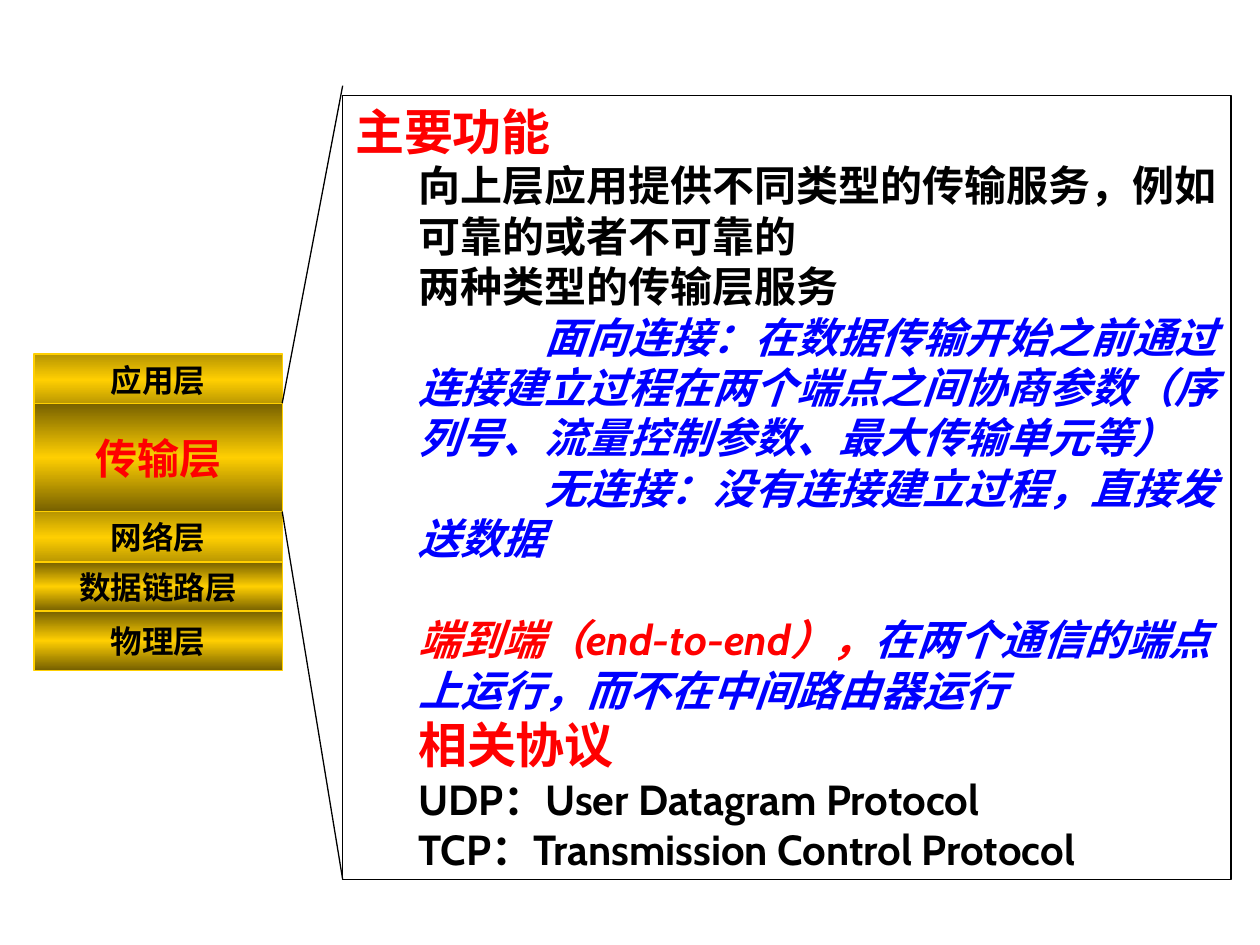
"""Build the transport layer slide: protocol stack, callout lines and function panel."""
from copy import deepcopy
from dataclasses import dataclass

from lxml import etree
from pptx import Presentation
from pptx import util as u
from pptx.dml.color import RGBColor
from pptx.enum import shapes, text
from pptx.oxml import ns

SCALE = 9144


@dataclass(frozen=True)
class Theme:
    font: str = "Cabin"
    black: str = "000000"
    red: str = "FF0000"
    blue: str = "0000FF"
    gold: str = "FFCF01"
    bronze: str = "B69401"
    olive: str = "766000"
    label: int = 18
    body: int = 24
    heading: int = 28
    line: float = 0.75


THEME = Theme()


def px(length):
    return u.Emu(length * SCALE)


def add_text(paragraph, content, size=THEME.body, color=THEME.black, italic=False):
    run = paragraph.add_run()
    run.text = content
    font = run.font
    font.name, font.size = THEME.font, u.Pt(size)
    font.bold, font.italic = True, italic
    font.color.rgb = RGBColor.from_string(color)


class SlideBuilder:
    def __init__(self, slide, theme):
        self.slide = slide
        self.theme = theme

    def outline(self, line, color):
        line.color.rgb = RGBColor.from_string(color)
        line.width = u.Pt(self.theme.line)

    def box(self, left, top, width, height, line):
        shape = self.slide.shapes.add_shape(
            shapes.MSO_SHAPE.RECTANGLE, px(left), px(top), px(width), px(height))
        shape.shadow.inherit = False
        self.outline(shape.line, line)
        shape.text_frame.word_wrap = True
        shape.text_frame.vertical_anchor = text.MSO_ANCHOR.MIDDLE
        return shape

    def layer(self, left, top, width, height, content, edge, **style):
        shape = self.box(left, top, width, height, self.theme.gold)
        shape.fill.gradient()
        shape.fill.gradient_angle = 90
        stop_list = shape._element.spPr.find(".//" + ns.qn("a:gsLst"))
        stop_list.append(deepcopy(stop_list[0]))
        colors = (edge, self.theme.gold, edge)
        for stop, position, color in zip(shape.fill.gradient_stops, (0, 0.5, 1), colors):
            stop.position = position
            stop.color.rgb = RGBColor.from_string(color)
        paragraph = shape.text_frame.paragraphs[0]
        paragraph.alignment = text.PP_ALIGN.CENTER
        add_text(paragraph, content, **style)

    def panel(self, left, top, width, height, rows):
        shape = self.box(left, top, width, height, self.theme.black)
        shape.fill.background()
        frame = shape.text_frame
        for index, (margin, indent, before, runs) in enumerate(rows):
            paragraph = frame.add_paragraph() if index else frame.paragraphs[0]
            paragraph.alignment = text.PP_ALIGN.LEFT
            paragraph.space_before = u.Pt(before)
            properties = paragraph._p.get_or_add_pPr()
            properties.set("marL", str(px(margin)))
            properties.set("indent", str(px(indent)))
            for content, style in runs:
                add_text(paragraph, content, **style)

    def connector(self, start, end):
        line = self.slide.shapes.add_connector(
            shapes.MSO_CONNECTOR.STRAIGHT, *map(px, start + end))
        self.outline(line.line, self.theme.black)
        etree.SubElement(line._element.spPr, ns.qn("a:effectLst"))


def main():
    presentation = Presentation()
    presentation.slide_width, presentation.slide_height = px(1000), px(750)
    slide = presentation.slides.add_slide(presentation.slide_layouts[6])
    builder = SlideBuilder(slide, THEME)

    label = dict(size=THEME.label)
    focus = dict(size=THEME.body, color=THEME.red)
    layers = [
        (281, 41, "应用层", THEME.bronze, label),
        (320, 86, "传输层", THEME.olive, focus),
        (406, 41, "网络层", THEME.bronze, label),
        (446, 39, "数据链路层", THEME.olive, label),
        (485, 47, "物理层", THEME.olive, label),
    ]
    for top, height, content, edge, style in layers:
        builder.layer(27, top, 197, height, content, edge, **style)

    heading = dict(size=THEME.heading, color=THEME.red)
    detail = dict(color=THEME.blue, italic=True)
    emphasis = dict(color=THEME.red, italic=True)
    builder.panel(272, 76, 705, 622, [
        (0, 0, 0, [("主要功能", heading)]),
        (50, 0, 0, [("向上层应用提供不同类型的传输服务，例如可靠的或者不可靠的", {})]),
        (50, 0, 0, [("两种类型的传输层服务", {})]),
        (50, 100, 0, [("面向连接：在数据传输开始之前通过连接建立过程在两个端点之间协商参数"
                       "（序列号、流量控制参数、最大传输单元等）", detail)]),
        (50, 100, 0, [("无连接：没有连接建立过程，直接发送数据", detail)]),
        (50, 0, 29, [("端到端（end-to-end），", emphasis),
                     ("在两个通信的端点上运行，而不在中间路由器运行", detail)]),
        (50, 0, 0, [("相关协议", heading)]),
        (50, 0, 0, [("UDP：User Datagram Protocol", {})]),
        (50, 0, 0, [("TCP：Transmission Control Protocol", {})]),
    ])

    builder.connector((224, 320), (272, 68))
    builder.connector((224, 406), (272, 698))
    presentation.save("out.pptx")


if __name__ == "__main__":
    main()
